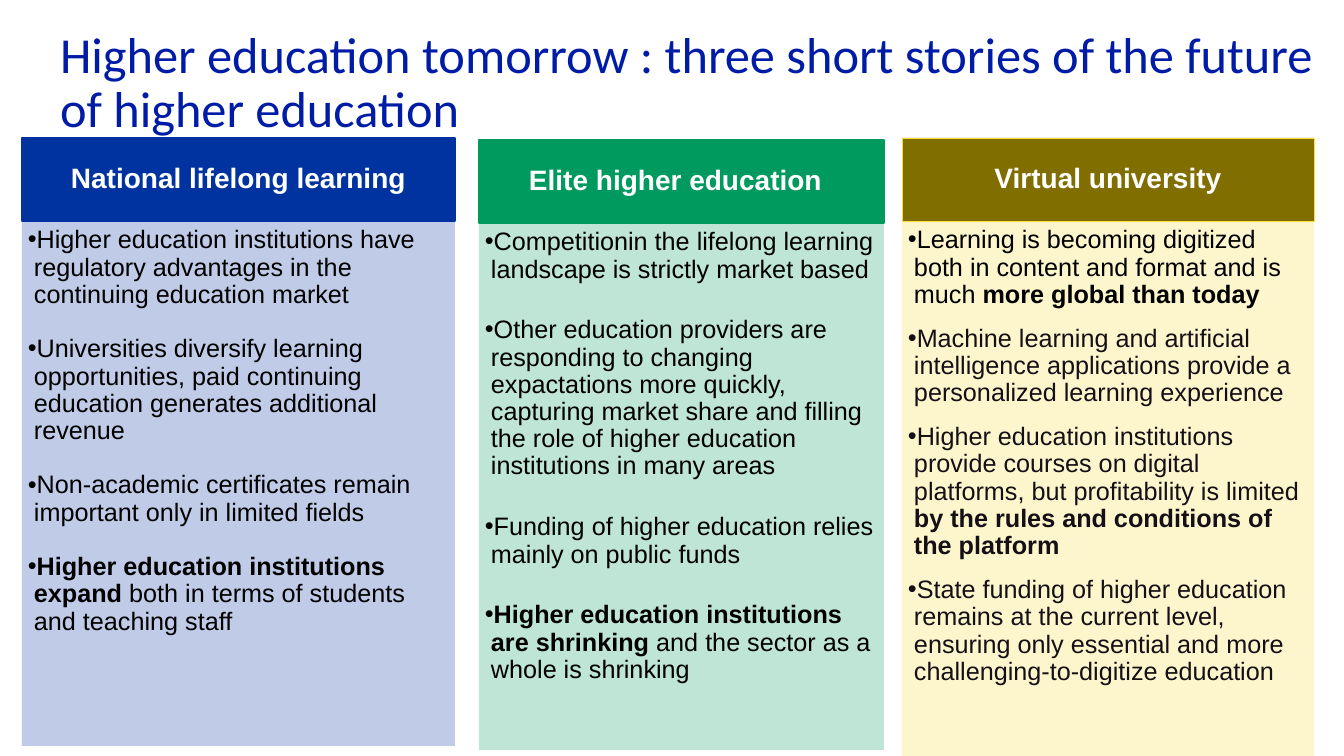
from lxml.etree import SubElement
from pptx import Presentation
from pptx.dml.color import RGBColor
from pptx.enum.shapes import MSO_SHAPE
from pptx.enum.text import MSO_ANCHOR, PP_ALIGN
from pptx.oxml.ns import qn
from pptx.util import Emu, Pt

NAVY = RGBColor(0x00, 0x1C, 0xA7)
BLUE = RGBColor(0x00, 0x33, 0xA0)
GREEN = RGBColor(0x00, 0x9A, 0x5F)
GOLD = RGBColor(0xFA, 0xDE, 0x38)
OLIVE = RGBColor(0x80, 0x6E, 0x00)
WHITE = RGBColor(0xFF, 0xFF, 0xFF)
BLACK = RGBColor(0x00, 0x00, 0x00)
INK = RGBColor(0x15, 0x0F, 0x16)

TITLE = "Higher education tomorrow : three short stories of the future of higher education"

# Each story: heading, head colour, tint, box (left, top, width, height),
# heading's right inset, gap in points, points as (text, bold part, colour)
STORIES = [
    ("National lifelong learning", BLUE, BLUE, (22, 138, 433, 608), 8, 19.5, [
        ("Higher education institutions have regulatory advantages in the "
         "continuing education market", "", BLACK),
        ("Universities diversify learning opportunities, paid continuing "
         "education generates additional revenue", "", BLACK),
        ("Non-academic certificates remain important only in limited fields", "", BLACK),
        ("Higher education institutions expand both in terms of students "
         "and teaching staff", "Higher education institutions expand", BLACK),
    ]),
    ("Elite higher education", GREEN, GREEN, (479, 140, 405, 610), 20, 24, [
        ("Competitionin the lifelong learning landscape is strictly market based", "", BLACK),
        ("Other education providers are responding to changing expactations "
         "more quickly, capturing market share and filling the role of higher "
         "education institutions in many areas", "", BLACK),
        ("Funding of higher education relies mainly on public funds", "", BLACK),
        ("Higher education institutions are shrinking and the sector as a "
         "whole is shrinking", "Higher education institutions are shrinking", BLACK),
    ]),
    ("Virtual university", OLIVE, GOLD, (902, 138, 412, 618), 8, 12, [
        ("Learning is becoming digitized both in content and format and is "
         "much more global than today", "more global than today", BLACK),
        ("Machine learning and artificial intelligence applications provide "
         "a personalized learning experience", "", INK),
        ("Higher education institutions provide courses on digital platforms, "
         "but profitability is limited by the rules and conditions of the platform",
         "by the rules and conditions of the platform", INK),
        ("State funding of higher education remains at the current level, "
         "ensuring only essential and more challenging-to-digitize education", "", INK),
    ]),
]
HEAD = 83    # heading height
HANG = 6     # bullet indent


def px(n):
    return Emu(n * 9071)


def style(run, font, size, color, bold=False):
    run.font.name = font
    run.font.size = Pt(size)
    run.font.color.rgb = color
    run.font.bold = bold


def inset(frame, *sides):
    (frame.margin_left, frame.margin_top,
     frame.margin_right, frame.margin_bottom) = map(px, sides)
    frame.word_wrap = True


def block(x, y, w, h, color):
    box = slide.shapes.add_shape(MSO_SHAPE.RECTANGLE, px(x), px(y), px(w), px(h))
    box.shadow.inherit = False
    box.fill.solid()
    box.fill.fore_color.rgb = color
    return box


def bullet(para, text, bold, color, gap):
    para.line_spacing = 0.9
    para.space_after = Pt(gap)
    para.alignment = PP_ALIGN.LEFT
    props = para._p.get_or_add_pPr()
    props.set("marL", str(px(HANG)))
    props.set("indent", str(-px(HANG)))
    SubElement(props, qn("a:buFont"), typeface="Arial")
    SubElement(props, qn("a:buChar"), char="•")
    before, mid, after = text.partition(bold) if bold else (text, "", "")
    for part in filter(None, (before, mid, after)):
        run = para.add_run()
        run.text = part
        style(run, "Arial", 18, color, part == bold)


deck = Presentation()
deck.slide_width, deck.slide_height = px(1344), px(756)
slide = deck.slides.add_slide(deck.slide_layouts[6])

# Stories
for name, dark, tint, (x, y, w, h), right, gap, points in STORIES:
    head = block(x, y, w, HEAD, dark)
    head.line.color.rgb = tint
    head.line.width = Pt(0.5 if tint == GOLD else 1)
    frame = head.text_frame
    inset(frame, 8, 4, right, 4)
    frame.vertical_anchor = MSO_ANCHOR.MIDDLE
    para = frame.paragraphs[0]
    para.text = name
    para.alignment = PP_ALIGN.CENTER
    para.line_spacing = 0.9
    style(para.runs[0], "Arial", 20, WHITE, True)

    body = block(x, y + HEAD, w, h - HEAD, tint)
    body.line.fill.background()
    shade = body.fill._xPr.find(".//" + qn("a:srgbClr"))
    SubElement(shade, qn("a:alpha"), val="25000")
    frame = body.text_frame
    inset(frame, 6, 6, 8, 9)
    frame.vertical_anchor = MSO_ANCHOR.TOP
    for i, point in enumerate(points):
        para = frame.add_paragraph() if i else frame.paragraphs[0]
        bullet(para, *point, gap)

# Title
title = slide.shapes.add_textbox(px(50), px(43), px(1294), px(82))
frame = title.text_frame
inset(frame, 10, 5, 10, 5)
frame.vertical_anchor = MSO_ANCHOR.MIDDLE
para = frame.paragraphs[0]
para.text = TITLE
para.line_spacing = 0.9
para.space_before = Pt(10)
style(para.runs[0], "Calibri", 36, NAVY)

deck.save("out.pptx")
